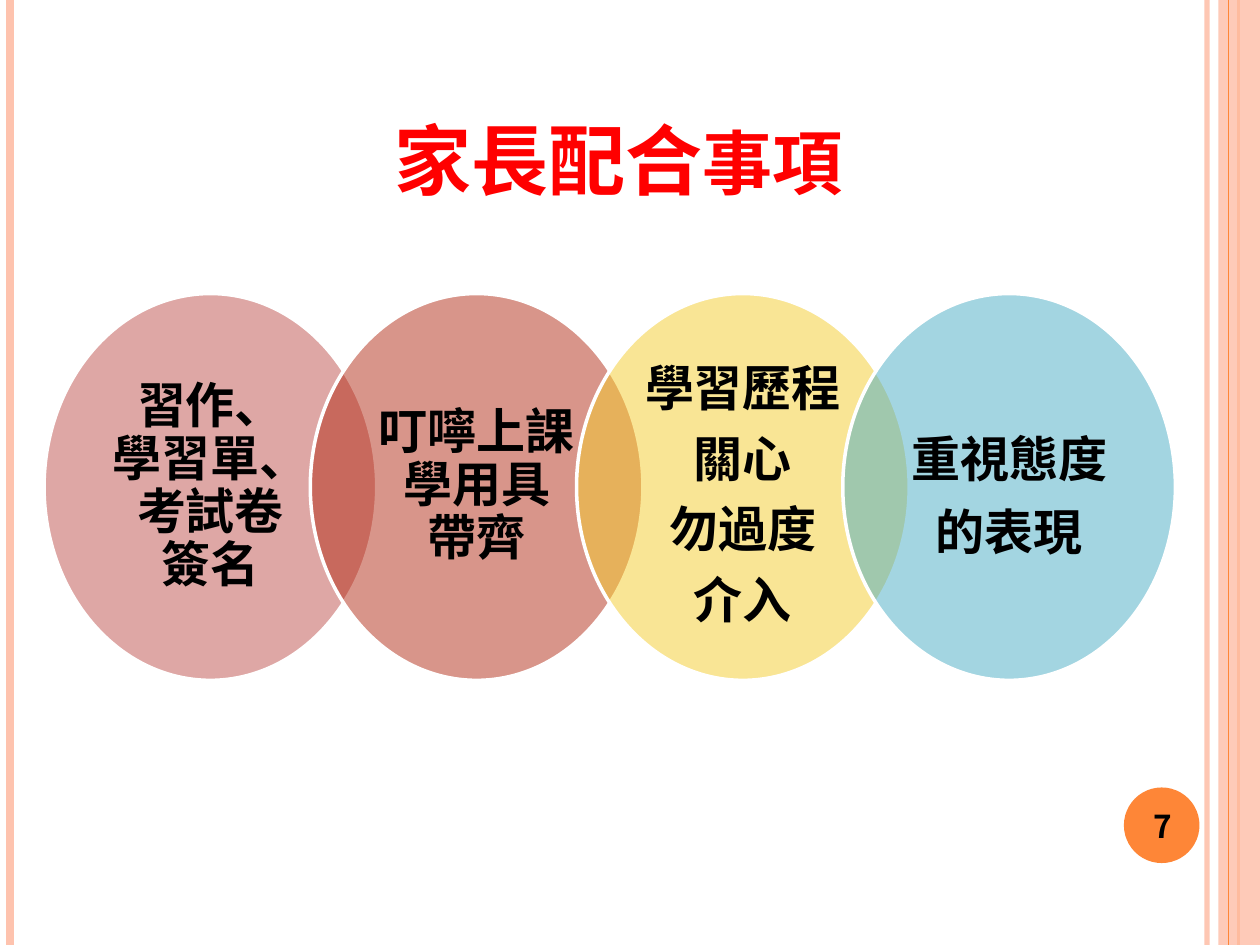
from lxml.etree import SubElement
from pptx import Presentation
from pptx.dml.color import RGBColor
from pptx.enum.shapes import MSO_CONNECTOR, MSO_SHAPE
from pptx.enum.text import MSO_ANCHOR, PP_ALIGN
from pptx.oxml.ns import qn
from pptx.util import Inches, Pt

FONT = "Noto Sans CJK SC"
COLORS = {
    "peach": "FEC3AE", "orange": "FE8637", "white": "FFFFFF",
    "black": "000000", "red": "FF0000", "rose": "BF504D",
    "brick": "B32C16", "yellow": "F5CD2D", "teal": "49ACC5",
}
SLIDE_HEIGHT = 7.5


class SlideBuilder:
    """Draws elements on one slide; positions are in inches."""

    def __init__(self, slide):
        self.slide = slide

    def color(self, name):
        return RGBColor.from_string(COLORS[name])

    def set_opacity(self, properties, percent):
        """Add an alpha value to the solid color under the given XML element."""
        color = properties.find(".//" + qn("a:srgbClr"))
        SubElement(color, qn("a:alpha"), val=str(percent * 1000))

    def vertical_line(self, x, color, width, opacity=100):
        line = self.slide.shapes.add_connector(
            MSO_CONNECTOR.STRAIGHT, Inches(x), 0, Inches(x), Inches(SLIDE_HEIGHT))
        line.line.color.rgb = self.color(color)
        line.line.width = Pt(width)
        properties = line._element.spPr
        if opacity < 100:
            self.set_opacity(properties, opacity)
        SubElement(properties, qn("a:effectLst"))

    def shape(self, kind, box, color, opacity=100, outline=None):
        shape = self.slide.shapes.add_shape(kind, *map(Inches, box))
        shape.shadow.inherit = False
        shape.fill.solid()
        shape.fill.fore_color.rgb = self.color(color)
        if opacity < 100:
            self.set_opacity(shape._element.spPr, opacity)
        if outline:
            shape.line.color.rgb = self.color(outline)
            shape.line.width = Pt(2)
        else:
            shape.line.fill.background()

    def text(self, box, paragraphs, color="black", align=PP_ALIGN.CENTER,
             anchor=MSO_ANCHOR.MIDDLE, spacing=1.0, side=0.1, top=0.05):
        """Add bold text; each paragraph is a list of (text, size) runs."""
        text_frame = self.slide.shapes.add_textbox(*map(Inches, box)).text_frame
        text_frame.word_wrap = True
        text_frame.vertical_anchor = anchor
        text_frame.margin_left = text_frame.margin_right = Inches(side)
        text_frame.margin_top = text_frame.margin_bottom = Inches(top)
        for index, runs in enumerate(paragraphs):
            paragraph = text_frame.add_paragraph() if index else text_frame.paragraphs[0]
            paragraph.alignment = align
            paragraph.line_spacing = spacing
            for content, size in runs:
                run = paragraph.add_run()
                run.text = content
                run.font.size = Pt(size)
                run.font.bold = True
                run.font.name = FONT
                run.font.color.rgb = self.color(color)
                SubElement(run._r.get_or_add_rPr(), qn("a:ea"), typeface=FONT)


def draw_frame(builder):
    builder.vertical_line(9.58, "peach", 3, opacity=93)
    builder.vertical_line(0.08, "peach", 4.5)
    builder.vertical_line(9.83, "orange", 1.5)
    builder.shape(MSO_SHAPE.RECTANGLE, (9.67, 0, 0.33, SLIDE_HEIGHT), "peach", opacity=87)
    builder.vertical_line(9.75, "orange", 0.75)
    builder.shape(MSO_SHAPE.OVAL, (8.92, 6.25, 0.6, 0.6), "orange")
    builder.text((8.89, 6.27, 0.67, 0.57), [[("7", 18)]])


def draw_reminders(builder):
    reminders = [
        ("rose", 0.9, ["習作、", "學習單、考試卷", "簽名"]),
        ("brick", 0.9, ["叮嚀上課學用具", "帶齊"]),
        ("yellow", 1.2, ["學習歷程關心", "勿過度", "介入"]),
        ("teal", 1.25, ["重視態度的表現"]),
    ]
    left, step = 0.35, 2.113
    for index, (color, spacing, lines) in enumerate(reminders):
        x = left + index * step
        builder.shape(MSO_SHAPE.OVAL, (x, 2.33, 2.64, 3.07), color,
                      opacity=50, outline="white")
        builder.text((x + 0.385, 2.78, 1.87, 2.17), [[(line, 28)] for line in lines],
                     spacing=spacing, side=0.15, top=0.04)


def main():
    presentation = Presentation()
    presentation.slide_width = Inches(10)
    presentation.slide_height = Inches(SLIDE_HEIGHT)
    builder = SlideBuilder(presentation.slides.add_slide(presentation.slide_layouts[6]))
    draw_frame(builder)
    draw_reminders(builder)
    builder.text((3.03, 0.84, 6.46, 0.83), [[("家長配合", 44), ("事項", 40)]],
                 color="red", align=PP_ALIGN.LEFT, anchor=MSO_ANCHOR.TOP)
    presentation.save("out.pptx")


if __name__ == "__main__":
    main()
